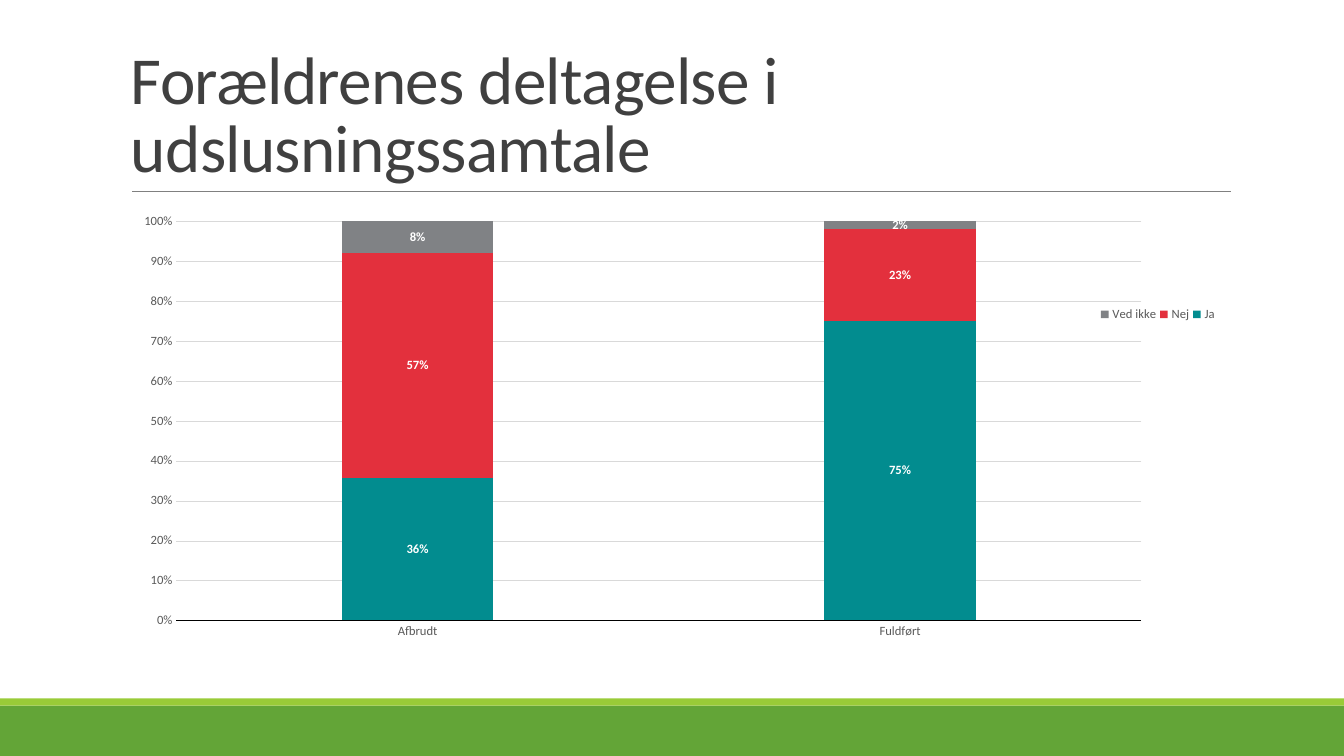
from dataclasses import dataclass

from lxml import etree
from pptx import Presentation
from pptx.chart.data import CategoryChartData
from pptx.dml.color import RGBColor
from pptx.enum.chart import XL_CHART_TYPE, XL_LEGEND_POSITION, XL_TICK_MARK
from pptx.enum.shapes import MSO_CONNECTOR, MSO_SHAPE
from pptx.enum.text import MSO_ANCHOR
from pptx.oxml.ns import qn
from pptx.util import Inches, Pt

STACKED = XL_CHART_TYPE.COLUMN_STACKED_100
LEGEND_RIGHT = XL_LEGEND_POSITION.RIGHT
NO_TICK = XL_TICK_MARK.NONE
STRAIGHT = MSO_CONNECTOR.STRAIGHT
RECTANGLE = MSO_SHAPE.RECTANGLE
BOTTOM = MSO_ANCHOR.BOTTOM


@dataclass(frozen=True)
class Theme:
    font: str = "Calibri"
    title_size: int = 48
    chart_size: int = 9
    title: str = "404040"
    label: str = "595959"
    white: str = "FFFFFF"
    black: str = "000000"
    grid: str = "D9D9D9"
    rule: str = "808080"
    band: str = "63A537"
    stripe: str = "99CB38"


THEME = Theme()
WIDTH, HEIGHT = 13.33, 7.5
CATEGORIES = ["Afbrudt", "Fuldført"]
ANSWERS = [
    ("Ja", (0.36, 0.75), "028C8F"),
    ("Nej", (0.57, 0.23), "E3303D"),
    ("Ved ikke", (0.08, 0.02), "808285"),
]


def rgb(value):
    return RGBColor.from_string(value)


def style_font(font, size, color, bold=False):
    font.name = THEME.font
    font.size = Pt(size)
    font.color.rgb = rgb(color)
    font.bold = bold


def style_line(line, color, width):
    line.color.rgb = rgb(color)
    line.width = Pt(width)


def add_bar(s, x, y, w, h, color):
    bar = s.shapes.add_shape(RECTANGLE, Inches(x), Inches(y), Inches(w), Inches(h))
    bar.shadow.inherit = False
    bar.fill.solid()
    bar.fill.fore_color.rgb = rgb(color)
    bar.line.fill.background()


def add_footer(s, x, y, w, h):
    """Draw a green band with a thin lighter stripe along its top."""
    stripe = 0.07
    add_bar(s, x, y + stripe, w, h - stripe, THEME.band)
    add_bar(s, x, y, w, stripe, THEME.stripe)


def add_title(s, x, y, w, h, text):
    """Place the title at the bottom of the box, with a rule under it."""
    inset = 0.11
    rule = s.shapes.add_connector(
        STRAIGHT, Inches(x + inset), Inches(y + h), Inches(x + w + 0.01), Inches(y + h))
    style_line(rule.line, THEME.rule, 0.5)
    etree.SubElement(rule._element.spPr, qn("a:effectLst"))

    tf = s.shapes.add_textbox(Inches(x), Inches(y), Inches(w), Inches(h)).text_frame
    tf.word_wrap = True
    tf.vertical_anchor = BOTTOM
    p = tf.paragraphs[0]
    p.line_spacing = 0.85
    style_font(p.font, THEME.title_size, THEME.title)
    r = p.add_run()
    r.text = text
    r._r.get_or_add_rPr().set("spc", "-50")


def set_layout(parent, index, x, y, w, h, inner=False):
    """Fix the place of a chart part, in fractions of the chart."""
    for old in parent.findall(qn("c:layout")):
        parent.remove(old)
    layout = etree.Element(qn("c:layout"))
    parent.insert(index, layout)
    manual = etree.SubElement(layout, qn("c:manualLayout"))
    settings = [("layoutTarget", "inner")] if inner else []
    settings += [("xMode", "edge"), ("yMode", "edge"),
                 ("x", x), ("y", y), ("w", w), ("h", h)]
    for tag, value in settings:
        etree.SubElement(manual, qn(f"c:{tag}")).set("val", str(value))


def style_axes(chart):
    category, value = chart.category_axis, chart.value_axis
    for axis in (category, value):
        axis.major_tick_mark = axis.minor_tick_mark = NO_TICK
        style_font(axis.tick_labels.font, THEME.chart_size, THEME.label)
    style_line(category.format.line, THEME.black, 0.1)
    value.format.line.fill.background()
    value.minimum_scale, value.maximum_scale, value.major_unit = 0, 1, 0.1
    value.tick_labels.number_format = "0%"
    value.tick_labels.number_format_is_linked = False
    style_line(value.major_gridlines.format.line, THEME.grid, 0.1)


def style_series(series, color):
    series.format.fill.solid()
    series.format.fill.fore_color.rgb = rgb(color)
    labels = series.data_labels
    labels.show_value = True
    labels.number_format = "0%"
    labels.number_format_is_linked = False
    style_font(labels.font, THEME.chart_size, THEME.white, bold=True)


def add_answer_chart(s, x, y, w, h):
    data = CategoryChartData(number_format="0%")
    data.categories = CATEGORIES
    for name, values, _ in ANSWERS:
        data.add_series(name, values)
    chart = s.shapes.add_chart(
        STACKED, Inches(x), Inches(y), Inches(w), Inches(h), data).chart
    style_font(chart.font, 10, THEME.black)
    chart.has_title = False
    style_axes(chart)

    plot = chart.plots[0]
    plot.vary_by_categories = False
    plot.gap_width, plot.overlap = 219, 100
    for series, (_, _, color) in zip(plot.series, ANSWERS):
        style_series(series, color)

    chart.has_legend = True
    legend = chart.legend
    legend.position = LEGEND_RIGHT
    legend.include_in_layout = False
    style_font(legend.font, THEME.chart_size, THEME.label)
    set_layout(legend._element, 1, 0.88, 0.22, 0.11, 0.06)
    plot_area = chart._chartSpace.find(f".//{qn('c:plotArea')}")
    set_layout(plot_area, 0, 0.05, 0.04, 0.87, 0.9, inner=True)


def main():
    prs = Presentation()
    prs.slide_width, prs.slide_height = Inches(WIDTH), Inches(HEIGHT)
    s = prs.slides.add_slide(prs.slide_layouts[6])
    add_footer(s, 0, 6.93, WIDTH, HEIGHT - 6.93)
    add_title(s, 1.2, 0.31, 11, 1.59, "Forældrenes deltagelse i udslusningssamtale")
    add_answer_chart(s, 1.2, 2.02, 11, 4.4)
    prs.save("out.pptx")


if __name__ == "__main__":
    main()
